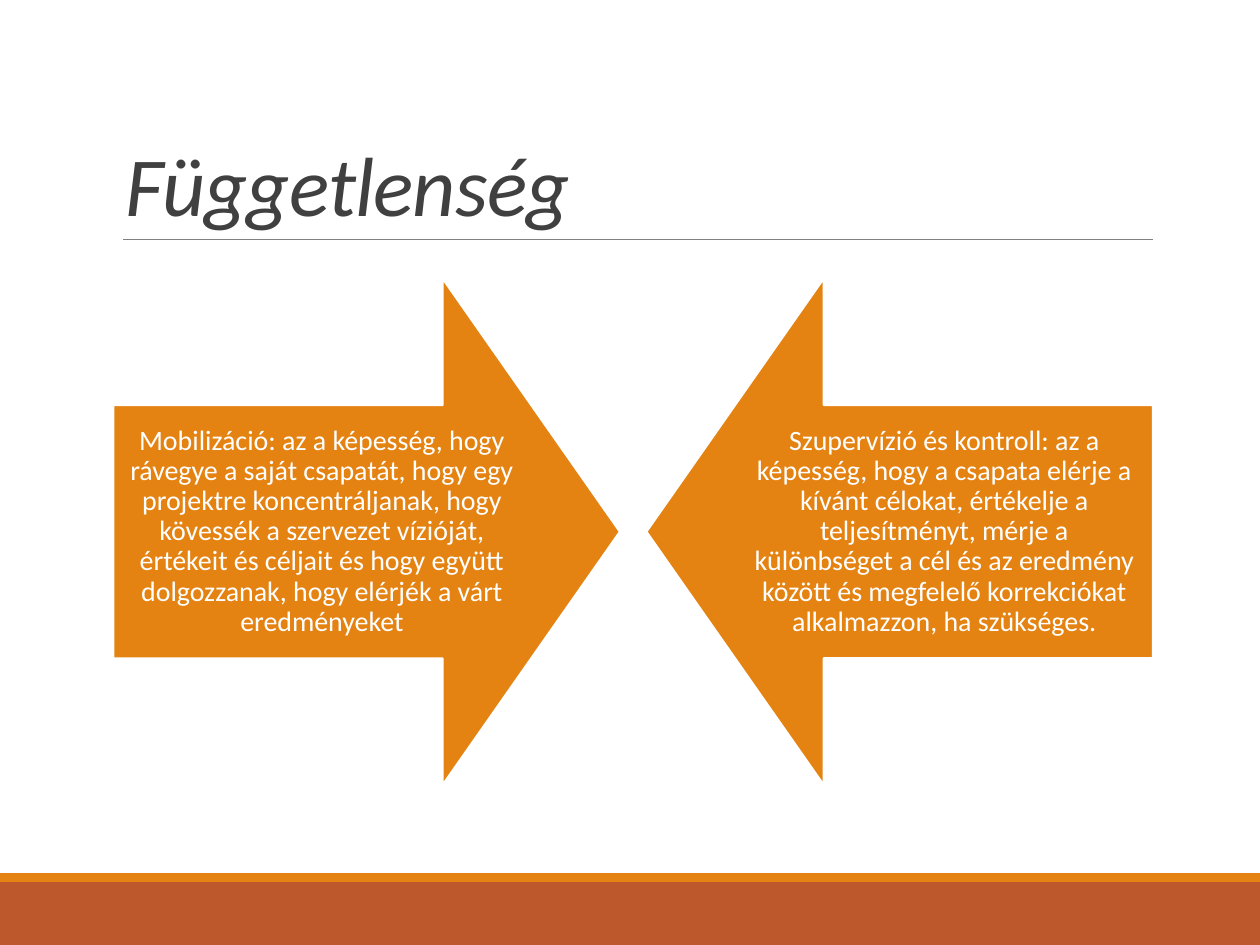
from lxml import etree
from pptx import Presentation
from pptx.dml.color import RGBColor
from pptx.enum.shapes import MSO_CONNECTOR, MSO_SHAPE
from pptx.enum.text import MSO_ANCHOR, PP_ALIGN
from pptx.oxml.ns import qn
from pptx.util import Inches, Pt

RECTANGLE = MSO_SHAPE.RECTANGLE
DOWN_ARROW = MSO_SHAPE.DOWN_ARROW
STRAIGHT = MSO_CONNECTOR.STRAIGHT
MIDDLE, BOTTOM = MSO_ANCHOR.MIDDLE, MSO_ANCHOR.BOTTOM
LEFT, CENTER = PP_ALIGN.LEFT, PP_ALIGN.CENTER

FONT = "Calibri"
ORANGE, RUST, GRAY, DARK, WHITE = "E48312", "BD582C", "808080", "404040", "FFFFFF"
ARROW_SIZE, HEAD_SHARE = 4.02, 0.35
TEXT_WIDTH, TEXT_HEIGHT = 3.31, 2.01

MOBILIZATION = (
    "Mobilizáció: az a képesség, hogy rávegye a saját csapatát, hogy egy projektre "
    "koncentráljanak, hogy kövessék a szervezet vízióját, értékeit és céljait és hogy "
    "együtt dolgozzanak, hogy elérjék a várt eredményeket"
)
SUPERVISION = (
    "Szupervízió és kontroll: az a képesség, hogy a csapata elérje a kívánt célokat, "
    "értékelje a teljesítményt, mérje a különbséget a cél és az eredmény között és "
    "megfelelő korrekciókat alkalmazzon, ha szükséges."
)


def color(hex_value):
    """Turn a hex string into a colour."""
    return RGBColor.from_string(hex_value)


def add_filled(page, kind, box, fill):
    """Add a flat preset shape without an outline."""
    shape = page.shapes.add_shape(kind, *map(Inches, box))
    shape.shadow.inherit = False
    shape.fill.solid()
    shape.fill.fore_color.rgb = color(fill)
    shape.line.fill.background()
    return shape


def add_text(page, box, text, size, hex_value, anchor, align, spacing, inset):
    """Add a wrapped text box with one paragraph and return its run."""
    frame = page.shapes.add_textbox(*map(Inches, box)).text_frame
    frame.word_wrap = True
    frame.vertical_anchor = anchor
    frame.margin_left = frame.margin_right = Inches(inset[0])
    frame.margin_top = frame.margin_bottom = Inches(inset[1])
    para = frame.paragraphs[0]
    para.text = text
    para.alignment = align
    para.line_spacing = spacing
    span = para.runs[0]
    span.font.name = FONT
    span.font.size = Pt(size)
    span.font.color.rgb = color(hex_value)
    return span


def add_footer(page, left, top, width, height):
    """Draw the rust band with its thin orange strip on top."""
    strip = 0.07
    add_filled(page, RECTANGLE, (left, top + strip, width, height - strip), RUST)
    add_filled(page, RECTANGLE, (left, top, width, strip), ORANGE)


def add_title(page, left, top, width, height, text):
    """Set the italic title above a thin rule."""
    bottom = top + height
    rule = page.shapes.add_connector(
        STRAIGHT, *map(Inches, (left + 0.08, bottom, left + width, bottom))
    )
    rule.line.color.rgb = color(GRAY)
    rule.line.width = Pt(0.5)
    etree.SubElement(rule._element.spPr, qn("a:effectLst"))
    span = add_text(
        page, (left, top, width, height), text, 48, DARK, BOTTOM, LEFT, 0.85, (0.1, 0.05)
    )
    span.font.italic = True
    span._r.get_or_add_rPr().set("spc", "-50")


def add_arrow(page, left, top, text, points_right):
    """Draw one sideways arrow with its text over the shaft."""
    arrow = add_filled(page, DOWN_ARROW, (left, top, ARROW_SIZE, ARROW_SIZE), ORANGE)
    arrow.rotation = 270 if points_right else 90
    arrow.adjustments[0] = 0.5
    arrow.adjustments[1] = HEAD_SHARE
    arrow.line.color.rgb = color(WHITE)
    arrow.line.width = Pt(1.25)
    text_left = left if points_right else left + ARROW_SIZE - TEXT_WIDTH
    text_top = top + (ARROW_SIZE - TEXT_HEIGHT) / 2
    add_text(
        page, (text_left, text_top, TEXT_WIDTH, TEXT_HEIGHT),
        text, 16, WHITE, MIDDLE, CENTER, 0.9, (0.12, 0.12),
    )


def main():
    """Build the slide and save it."""
    deck = Presentation()
    deck.slide_width, deck.slide_height = Inches(10), Inches(7.5)
    page = deck.slides.add_slide(deck.slide_layouts[6])
    add_footer(page, 0, 6.93, 10, 0.57)
    add_title(page, 0.9, 0.31, 8.25, 1.59, "Függetlenség")
    add_arrow(page, 0.9, 2.21, MOBILIZATION, points_right=True)
    add_arrow(page, 5.13, 2.21, SUPERVISION, points_right=False)
    deck.save("out.pptx")


if __name__ == "__main__":
    main()
